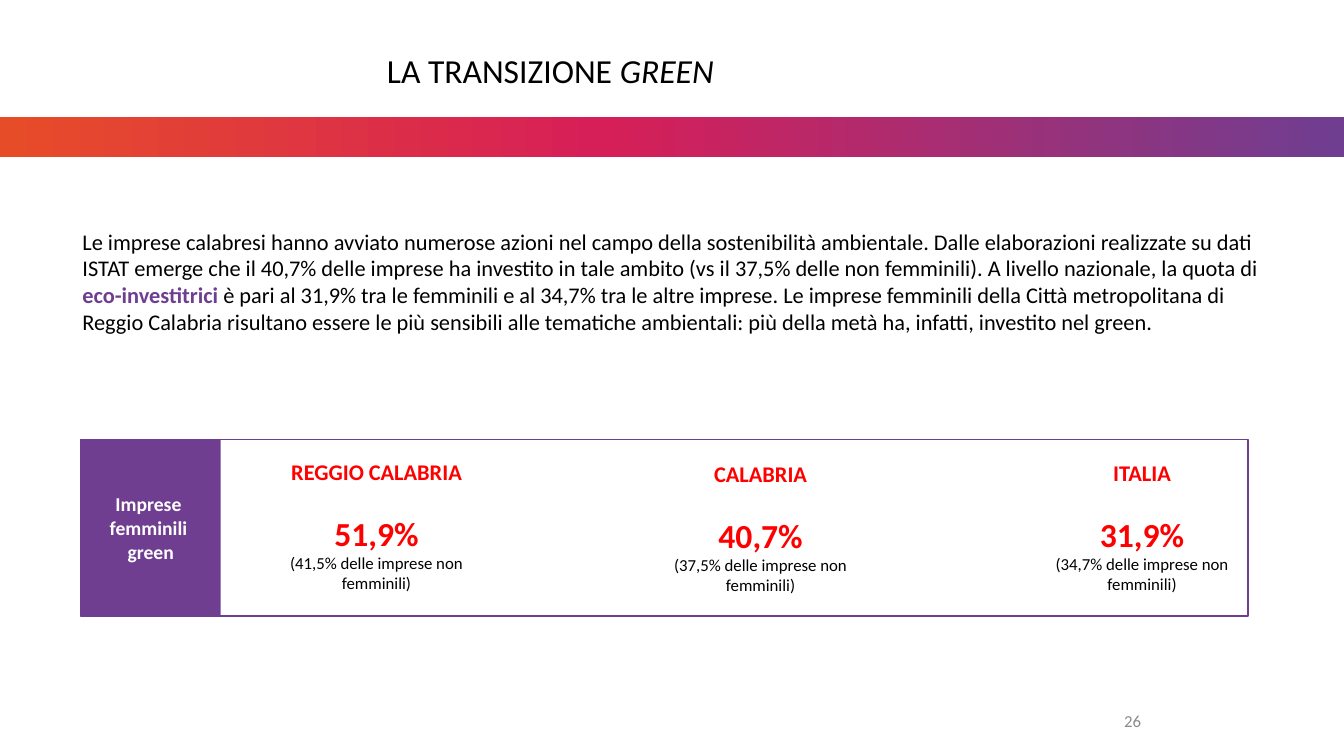
"""Builds the slide on the green transition of women's firms."""
from copy import deepcopy
from dataclasses import dataclass

from pptx import Presentation
from pptx.dml.color import RGBColor as Rgb
from pptx.enum.shapes import MSO_SHAPE as Shape
from pptx.enum.text import MSO_ANCHOR as Anchor, PP_ALIGN as Align
from pptx.oxml.ns import qn
from pptx.util import Pt


@dataclass(frozen=True)
class Theme:
    font: str = "Calibri"
    black: str = "000000"
    white: str = "FFFFFF"
    grey: str = "8C8C8C"
    red: str = "FF0000"
    purple: str = "6F3E91"
    band: tuple = ((0, "E74C29"), (0.45, "D61F58"), (1, "6F3E91"))
    title: int = 24
    body: int = 16
    label: int = 14
    small: int = 12


THEME = Theme()

INTRO = (
    "Le imprese calabresi hanno avviato numerose azioni nel campo della sostenibilità "
    "ambientale. Dalle elaborazioni realizzate su dati ISTAT emerge che il 40,7% delle "
    "imprese ha investito in tale ambito (vs il 37,5% delle non femminili). A livello "
    "nazionale, la quota di ")
FOCUS = "eco-investitrici "
CLOSE = (
    "è pari al 31,9% tra le femminili e al 34,7% tra le altre imprese. Le imprese "
    "femminili della Città metropolitana di Reggio Calabria risultano essere le più "
    "sensibili alle tematiche ambientali: più della metà ha, infatti, investito nel green.")

AREAS = (
    ("REGGIO CALABRIA", "51,9%", "41,5%", 192.3, 324, 153.4),
    ("CALABRIA", "40,7%", "37,5%", 466.6, 325.4, 153.4),
    ("ITALIA", "31,9%", "34,7%", 740.2, 324.7, 151.2),
)


def write(para, text, size=THEME.body, color=THEME.black, bold=False, italic=False):
    run = para.add_run()
    run.text = text
    font = run.font
    font.name, font.size = THEME.font, Pt(size)
    font.bold, font.italic = bold, italic
    font.color.rgb = Rgb.from_string(color)


def add_para(frame, first=False, align=Align.LEFT, before=0):
    para = frame.paragraphs[0] if first else frame.add_paragraph()
    para.alignment = align
    if before:
        para.space_before = Pt(before)
    return para


def add_box(slide, left, top, width, height, anchor=Anchor.TOP):
    frame = slide.shapes.add_textbox(Pt(left), Pt(top), Pt(width), Pt(height)).text_frame
    frame.word_wrap = True
    frame.vertical_anchor = anchor
    return frame


def add_rect(slide, left, top, width, height, fill=None, line=None):
    rect = slide.shapes.add_shape(
        Shape.RECTANGLE, Pt(left), Pt(top), Pt(width), Pt(height))
    rect.shadow.inherit = False
    if fill:
        rect.fill.solid()
        rect.fill.fore_color.rgb = Rgb.from_string(fill)
    else:
        rect.fill.background()
    if line:
        rect.line.color.rgb = Rgb.from_string(line)
        rect.line.width = Pt(1)
    else:
        rect.line.fill.background()
    return rect


def add_band(slide):
    band = add_rect(slide, 0, 83.5, 960, 28.8)
    band.fill.gradient()
    band.fill.gradient_angle = 0
    stops = band.element.spPr.find(qn("a:gradFill")).find(qn("a:gsLst"))
    stops.append(deepcopy(stops[0]))
    for stop, (place, color) in zip(band.fill.gradient_stops, THEME.band):
        stop.position = place
        stop.color.rgb = Rgb.from_string(color)


def add_area(slide, name, share, other, left, top, width):
    frame = add_box(slide, left, top, width, 104.4)
    write(add_para(frame, True, Align.CENTER), name, color=THEME.red, bold=True)
    write(add_para(frame, align=Align.CENTER, before=19.5), share,
          size=THEME.title, color=THEME.red, bold=True)
    write(add_para(frame, align=Align.CENTER),
          f"({other} delle imprese non femminili)", size=THEME.small)


def add_label(slide):
    frame = add_rect(slide, 57.6, 313.9, 100.1, 126, fill=THEME.purple).text_frame
    frame.word_wrap = True
    frame.vertical_anchor = Anchor.MIDDLE
    for index, text in enumerate(("Imprese ", "femminili ", "green")):
        write(add_para(frame, index == 0, Align.CENTER), text,
              size=THEME.label, color=THEME.white, bold=True)


def main():
    deck = Presentation()
    deck.slide_width, deck.slide_height = Pt(960), Pt(540)
    slide = deck.slides.add_slide(deck.slide_layouts[6])

    add_band(slide)
    intro = add_para(add_box(slide, 51.8, 159.1, 856.1, 85), True)
    write(intro, INTRO)
    write(intro, FOCUS, color=THEME.purple, bold=True)
    write(intro, CLOSE)

    title = add_para(add_box(slide, 269.3, 35.3, 639.4, 46.1), True)
    title.line_spacing = 0.9
    write(title, "LA TRANSIZIONE ", size=THEME.title)
    write(title, "GREEN", size=THEME.title, italic=True)

    page = add_box(slide, 606.2, 500.4, 216, 28.8, Anchor.MIDDLE)
    write(add_para(page, True, Align.RIGHT), "26", size=THEME.small, color=THEME.grey)

    add_label(slide)
    add_rect(slide, 57.6, 313.9, 833.8, 126, line=THEME.purple)
    for area in AREAS:
        add_area(slide, *area)
    deck.save("out.pptx")


if __name__ == "__main__":
    main()
